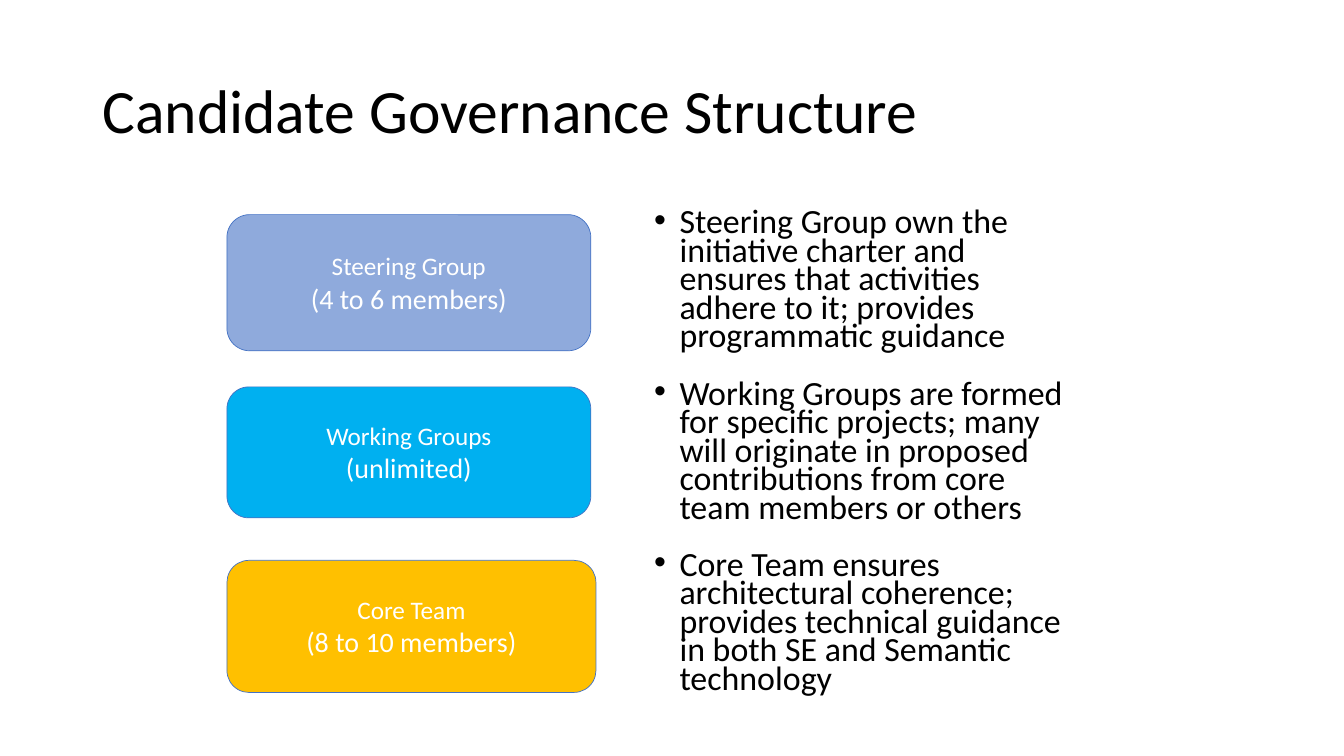
from dataclasses import dataclass

from lxml.etree import SubElement
from pptx import Presentation
from pptx.dml.color import RGBColor
from pptx.enum.shapes import MSO_SHAPE
from pptx.enum.text import MSO_ANCHOR, MSO_AUTO_SIZE, PP_ALIGN
from pptx.oxml.ns import qn
from pptx.util import Cm, Pt

FONT = "Calibri"
BLACK, WHITE, OUTLINE = "000000", "FFFFFF", "4472C4"
BOX_LEFT = 5.72
BULLET_INDENT = Cm(0.64)


@dataclass
class Group:
    name: str
    size: str
    duty: str
    fill: str
    top: float
    width: float
    height: float


GROUPS = [
    Group("Steering Group", "(4 to 6 members)",
          "Steering Group own the initiative charter and ensures that activities "
          "adhere to it; provides programmatic guidance",
          "8FAADC", 5.41, 9.17, 3.43),
    Group("Working Groups", "(unlimited)",
          "Working Groups are formed for specific projects; many will originate in "
          "proposed contributions from core team members or others",
          "00B0F0", 9.75, 9.17, 3.3),
    Group("Core Team", "(8 to 10 members)",
          "Core Team ensures architectural coherence; provides technical guidance "
          "in both SE and Semantic technology",
          "FFC000", 14.12, 9.3, 3.33),
]


def color(value: str) -> RGBColor:
    return RGBColor.from_string(value)


def add_text(paragraph, text: str, *, size: float, ink: str = BLACK) -> None:
    run = paragraph.add_run()
    run.text = text
    run.font.name = FONT
    run.font.size = Pt(size)
    run.font.color.rgb = color(ink)


def place(shape, left: float, top: float, width: float, height: float) -> None:
    shape.left, shape.top = Cm(left), Cm(top)
    shape.width, shape.height = Cm(width), Cm(height)


def add_bullet(paragraph) -> None:
    properties = paragraph._p.get_or_add_pPr()
    properties.set("marL", str(BULLET_INDENT))
    properties.set("indent", str(-BULLET_INDENT))
    SubElement(properties, qn("a:buFont"), typeface="Arial")
    SubElement(properties, qn("a:buChar"), char="•")


def fill_title(title) -> None:
    place(title, 2.33, 1.01, 29.21, 3.68)
    frame = title.text_frame
    frame.auto_size = MSO_AUTO_SIZE.NONE
    frame.vertical_anchor = MSO_ANCHOR.MIDDLE
    paragraph = frame.paragraphs[0]
    paragraph.alignment = PP_ALIGN.LEFT
    paragraph.line_spacing = 0.9
    add_text(paragraph, "Candidate Governance Structure", size=44)


def fill_duties(body, groups: list[Group]) -> None:
    place(body, 16.23, 5.08, 10.92, 13.13)
    frame = body.text_frame
    frame.auto_size = MSO_AUTO_SIZE.NONE
    frame.vertical_anchor = MSO_ANCHOR.TOP
    frame.margin_top = Cm(0.24)
    for index, group in enumerate(groups):
        paragraph = frame.add_paragraph() if index else frame.paragraphs[0]
        paragraph.line_spacing = 0.7
        paragraph.space_before = Pt(0)
        paragraph.space_after = Pt(20.5)
        add_bullet(paragraph)
        add_text(paragraph, group.duty, size=24.2)


def add_group_box(slide, group: Group) -> None:
    box = slide.shapes.add_shape(
        MSO_SHAPE.ROUNDED_RECTANGLE,
        Cm(BOX_LEFT), Cm(group.top), Cm(group.width), Cm(group.height))
    box.shadow.inherit = False
    box.fill.solid()
    box.fill.fore_color.rgb = color(group.fill)
    box.line.color.rgb = color(OUTLINE)
    box.line.width = Pt(0.5)
    frame = box.text_frame
    frame.word_wrap = True
    frame.vertical_anchor = MSO_ANCHOR.MIDDLE
    paragraph = frame.paragraphs[0]
    paragraph.alignment = PP_ALIGN.CENTER
    add_text(paragraph, group.name, size=18, ink=WHITE)
    paragraph.add_line_break()
    add_text(paragraph, group.size, size=20, ink=WHITE)


def main() -> None:
    presentation = Presentation()
    presentation.slide_width, presentation.slide_height = Cm(33.87), Cm(19.05)
    slide = presentation.slides.add_slide(presentation.slide_layouts[1])
    fill_title(slide.shapes.title)
    fill_duties(slide.placeholders[1], GROUPS)
    for group in GROUPS:
        add_group_box(slide, group)
    presentation.save("out.pptx")


if __name__ == "__main__":
    main()
